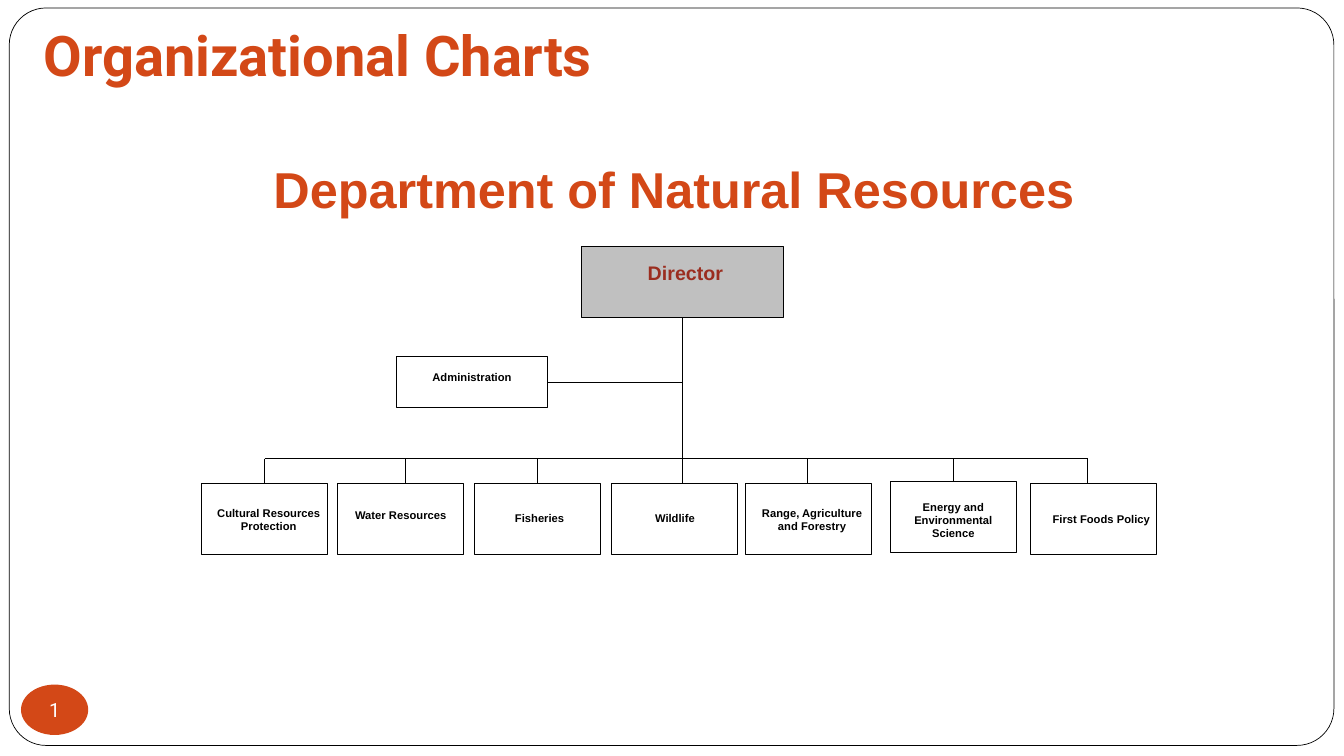
from lxml.etree import SubElement
from pptx import Presentation
from pptx.dml.color import RGBColor
from pptx.enum.shapes import MSO_CONNECTOR, MSO_SHAPE
from pptx.enum.text import MSO_ANCHOR, MSO_AUTO_SIZE, PP_ALIGN
from pptx.oxml.ns import qn
from pptx.util import Inches, Pt

COLUMNS, ROWS = 160, 90
COLORS = {
    "accent": "D34817",
    "director": "9B2D1F",
    "gray": "C0C0C0",
    "ink": "000000",
    "paper": "FFFFFF",
}
TOP, LEFT, BOTTOM, RIGHT = range(4)

BOX_WIDTH, BOX_HEIGHT = 15, 8.4
BUS_ROW, BOX_ROW = 54.6, 57.6
# name, box column, box row, label column, label row, label width, lines, drop column
DEPARTMENTS = [
    ("Cultural Resources Protection", 24, BOX_ROW, 24, 59.64, 16, 2, 31.5),
    ("Water Resources", 40.2, BOX_ROW, 39.72, 59.88, 16, 1, 48.24),
    ("Fisheries", 56.5, BOX_ROW, 57.24, 60.24, 14, 1, 64),
    ("Wildlife", 72.84, BOX_ROW, 72.36, 60.24, 16, 1, 81.24),
    ("Range, Agriculture and Forestry", 88.8, BOX_ROW, 88.68, 59.64, 16, 2, 96.12),
    ("Energy and Environmental Science", 106, 57.36, 106, 58.92, 15, 3, 113.5),
    ("First Foods Policy", 122.64, BOX_ROW, 123.12, 60.36, 16, 1, 129.5),
]


def rgb(name):
    return RGBColor.from_string(COLORS[name])


def write_text(frame, text, size=8, font="Arial", color="ink", bold=True,
               align=PP_ALIGN.CENTER, anchor=MSO_ANCHOR.TOP,
               insets=(0.1, 0.05, 0.1, 0.05), wrap=True):
    """Fill a text frame; insets are left, top, right, bottom in inches."""
    frame.auto_size = MSO_AUTO_SIZE.NONE
    frame.word_wrap = wrap
    frame.vertical_anchor = anchor
    (frame.margin_left, frame.margin_top,
     frame.margin_right, frame.margin_bottom) = map(Inches, insets)
    paragraph = frame.paragraphs[0]
    paragraph.alignment = align
    run = paragraph.add_run()
    run.text = text
    run.font.size = Pt(size)
    run.font.name = font
    run.font.bold = bold
    run.font.color.rgb = rgb(color)


class ChartSlide:
    """A slide whose elements are placed on a grid of COLUMNS by ROWS."""

    def __init__(self, presentation):
        self.column = presentation.slide_width / COLUMNS
        self.row = presentation.slide_height / ROWS
        self.slide = presentation.slides.add_slide(presentation.slide_layouts[5])
        self.shapes = self.slide.shapes

    def place(self, *cells):
        """Turn alternating column and row values into lengths."""
        return [round(cell * (self.row if i % 2 else self.column))
                for i, cell in enumerate(cells)]

    def title(self, text, cells, **style):
        title = self.shapes.title
        title.left, title.top, title.width, title.height = self.place(*cells)
        write_text(title.text_frame, text, **style)

    def label(self, text, cells, **style):
        label = self.shapes.add_textbox(*self.place(*cells))
        write_text(label.text_frame, text, **style)

    def box(self, cells, kind=MSO_SHAPE.RECTANGLE, fill=None, line=0.75):
        box = self.shapes.add_shape(kind, *self.place(*cells))
        box.shadow.inherit = False
        if fill:
            box.fill.solid()
            box.fill.fore_color.rgb = rgb(fill)
        else:
            box.fill.background()
        if line:
            box.line.color.rgb = rgb("ink")
            box.line.width = Pt(line)
        else:
            box.line.fill.background()
        return box

    def frame(self, cells, radius):
        frame = self.box(cells, MSO_SHAPE.ROUNDED_RECTANGLE, "paper", 0.5)
        frame.adjustments[0] = radius
        self.shapes.title.element.addprevious(frame.element)

    def line(self, cells, kind=MSO_CONNECTOR.STRAIGHT):
        line = self.shapes.add_connector(kind, *self.place(*cells))
        line.line.color.rgb = rgb("ink")
        line.line.width = Pt(0.75)
        SubElement(line.element.spPr, qn("a:effectLst"))
        return line

    def corner(self, cells, start, start_side, end, end_side):
        """Join two boxes with a line that bends once."""
        corner = self.line(cells, MSO_CONNECTOR.ELBOW)
        corner.element.spPr.find(qn("a:prstGeom")).set("prst", "bentConnector2")
        corner.begin_connect(start, start_side)
        corner.end_connect(end, end_side)

    def department(self, name, left, top, label_left, label_top,
                   label_width, lines, drop):
        box = self.box((left, top, BOX_WIDTH, BOX_HEIGHT))
        self.label(name, (label_left, label_top, label_width, 1.2 + 1.6 * lines))
        stem = self.line((drop, BUS_ROW, drop, top))
        if abs(drop - left - BOX_WIDTH / 2) < 0.1:
            stem.end_connect(box, TOP)


def main():
    presentation = Presentation()
    presentation.slide_width = Inches(13.33)
    presentation.slide_height = Inches(7.5)
    chart = ChartSlide(presentation)

    heading = dict(color="accent", anchor=MSO_ANCHOR.BOTTOM,
                   insets=(0.1, 0.05, 0.1, 0.1))
    chart.frame((1.1, 0.95, 157.7, 87.8), 0.05)
    chart.title("Organizational Charts", (4, 1.7, 102, 10), size=40,
                font="Roboto", align=PP_ALIGN.LEFT, **heading)
    chart.label("Department of Natural Resources", (24.7, 19.2, 111.1, 8),
                size=36, **heading)

    director = chart.box((69.24, 29.4, 24, 8.4), fill="gray")
    chart.label("Director", (70.2, 30.5, 22.8, 8.3), size=14, color="director")
    administration = chart.box((47.2, 42.5, 18, 6))
    chart.label("Administration", (48.2, 43.44, 16, 2.8))

    trunk, branch_row = 81.24, 45.5
    chart.corner((65.2, branch_row, trunk, 37.8),
                 administration, RIGHT, director, BOTTOM)
    chart.line((trunk, branch_row, trunk, BUS_ROW))
    chart.line((DEPARTMENTS[0][-1], BUS_ROW, DEPARTMENTS[-1][-1], BUS_ROW))
    for department in DEPARTMENTS:
        chart.department(*department)

    page_number = chart.box((2.5, 81.5, 8, 6), MSO_SHAPE.OVAL, "accent", None)
    write_text(page_number.text_frame, "1", size=14, font="Roboto",
               color="paper", bold=False, anchor=MSO_ANCHOR.MIDDLE,
               insets=(0, 0, 0, 0), wrap=False)
    presentation.save("out.pptx")


if __name__ == "__main__":
    main()
